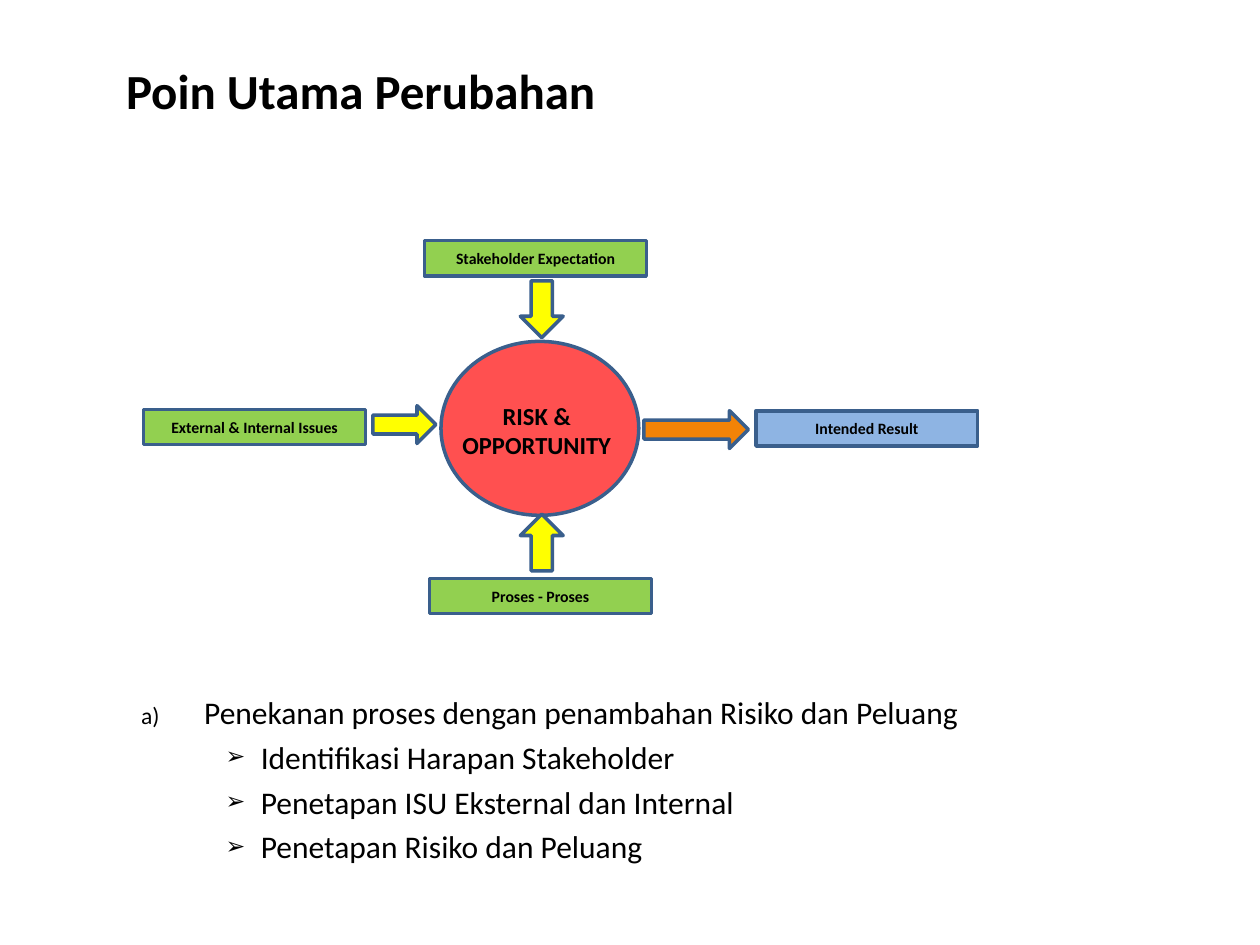
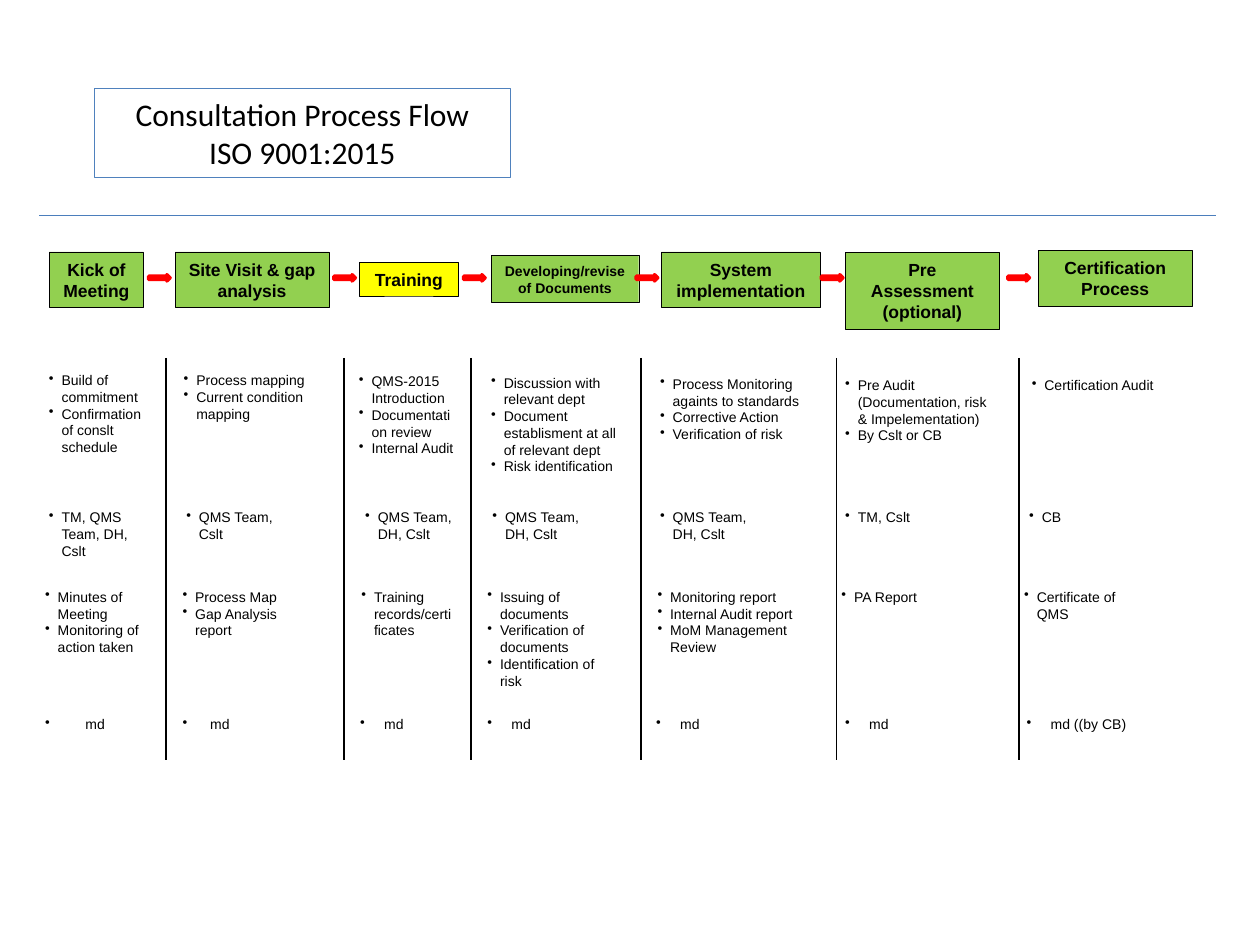
from dataclasses import dataclass

from lxml.etree import SubElement
from pptx import Presentation
from pptx.dml.color import RGBColor
from pptx.enum.shapes import MSO_CONNECTOR as Link, MSO_SHAPE as Shape
from pptx.enum.text import MSO_ANCHOR as Anchor, MSO_AUTO_SIZE as AutoSize, PP_ALIGN as Align
from pptx.oxml.ns import qn
from pptx.util import Inches, Pt

# Shared style
BLACK = RGBColor(0x00, 0x00, 0x00)
GREEN = RGBColor(0x92, 0xD0, 0x50)
YELLOW = RGBColor(0xFF, 0xFF, 0x00)
ORANGE = RGBColor(0xF3, 0x83, 0x07)
CORAL = RGBColor(0xFF, 0x50, 0x50)
SKY = RGBColor(0x8E, 0xB4, 0xE3)
STEEL = RGBColor(0x3A, 0x5F, 0x8C)
BLUE = RGBColor(0x4F, 0x81, 0xBD)
RULE_BLUE = RGBColor(0x4B, 0x7E, 0xBC)
RED = RGBColor(0xFF, 0x00, 0x00)

# The slide is a grid of 100 columns and 75 rows, each a tenth of an inch
COLUMNS, ROWS = 100, 75
TITLE_AND_BODY, TITLE_ONLY = 1, 5


def cells(*counts):
    return [Inches(count / 10) for count in counts]


@dataclass
class Bullet:
    mark: str
    margin: float
    hang: float
    percent: int = 100


def add_bullet(paragraph, bullet):
    props = paragraph._p.get_or_add_pPr()
    margin, hang = cells(bullet.margin, bullet.hang)
    props.set("marL", str(margin))
    props.set("indent", str(-hang))
    SubElement(props, qn("a:buSzPct"), val=str(bullet.percent * 1000))
    if bullet.mark == "a)":
        SubElement(props, qn("a:buAutoNum"), type="alphaLcParenR")
    else:
        SubElement(props, qn("a:buChar"), char=bullet.mark)


def write(frame, *lines, font="Calibri", size=18, bold=False, align=Align.LEFT,
          anchor=Anchor.TOP, before=0, bullets=()):
    frame.word_wrap = True
    frame.auto_size = AutoSize.NONE
    frame.vertical_anchor = anchor
    for number, line in enumerate(lines):
        paragraph = frame.add_paragraph() if number else frame.paragraphs[0]
        paragraph.alignment = align
        paragraph.space_before = Pt(before)
        run = paragraph.add_run()
        run.text = line
        run.font.name = font
        run.font.size = Pt(size)
        run.font.bold = bold
        run.font.color.rgb = BLACK
        if bullets:
            add_bullet(paragraph, bullets[number])


class Deck:
    def __init__(self):
        self.show = Presentation()
        self.show.slide_width, self.show.slide_height = cells(COLUMNS, ROWS)
        self.slide = None

    def new_slide(self, layout):
        self.slide = self.show.slides.add_slide(self.show.slide_layouts[layout])

    def placeholder(self, index, area, *lines, **style):
        holder = self.slide.placeholders[index]
        holder.left, holder.top, holder.width, holder.height = cells(*area)
        write(holder.text_frame, *lines, **style)
        return holder

    def shape(self, kind, area, fill, line, weight, label=None, **style):
        shape = self.slide.shapes.add_shape(kind, *cells(*area))
        shape.shadow.inherit = False
        shape.fill.solid()
        shape.fill.fore_color.rgb = fill
        shape.line.color.rgb = line
        shape.line.width = Pt(weight)
        if label:
            write(shape.text_frame, label, align=Align.CENTER, anchor=Anchor.MIDDLE,
                  bold=True, **style)

    def text(self, area, *lines, **style):
        box = self.slide.shapes.add_textbox(*cells(*area))
        write(box.text_frame, *lines, **style)

    def line(self, start, end, color, weight):
        rule = self.slide.shapes.add_connector(Link.STRAIGHT, *cells(*start, *end))
        rule.line.color.rgb = color
        rule.line.width = Pt(weight)
        SubElement(rule._element.spPr, qn("a:effectLst"))


# Slide 1: key points of the change
def build_key_points(deck):
    deck.new_slide(TITLE_AND_BODY)
    deck.placeholder(0, (9, 4.3, 58.5, 5.7), "Poin Utama Perubahan",
                     size=28, bold=True, align=Align.JUSTIFY)
    point = Bullet("a)", 6.2, 5, 75)
    detail = Bullet("➢", 10.7, 2.8, 75)
    deck.placeholder(1, (9, 54.5, 85, 16),
                     "Penekanan proses dengan penambahan Risiko dan Peluang",
                     "Identifikasi Harapan Stakeholder",
                     "Penetapan ISU Eksternal dan Internal",
                     "Penetapan Risiko dan Peluang",
                     align=Align.JUSTIFY, before=4, bullets=[point] + [detail] * 3)

    # Risk in the centre, inputs and result around it
    deck.shape(Shape.OVAL, (35, 27.1, 15.7, 13.8), CORAL, STEEL, 2)
    for left, top, fill, label in (
            (33.7, 19.1, GREEN, "Stakeholder Expectation"),
            (11.4, 32.5, GREEN, "External & Internal Issues"),
            (34.1, 45.9, GREEN, "Proses - Proses"),
            (60, 32.6, SKY, "Intended Result")):
        deck.shape(Shape.RECTANGLE, (left, top, 17.6, 2.8), fill, STEEL, 2, label, size=9)
    deck.text((34.5, 31.3, 16.2, 5.7), "RISK & OPPORTUNITY",
              size=14, bold=True, align=Align.CENTER)

    # Flow arrows
    for kind, area, fill in (
            (Shape.DOWN_ARROW, (41.3, 22.3, 3.4, 4.5), YELLOW),
            (Shape.UP_ARROW, (41.3, 40.8, 3.4, 4.5), YELLOW),
            (Shape.RIGHT_ARROW, (29.6, 32.2, 5, 3), YELLOW),
            (Shape.RIGHT_ARROW, (51.1, 32.6, 8.3, 3), ORANGE)):
        deck.shape(kind, area, fill, STEEL, 2)


# Slide 2: stages of the consultation
@dataclass
class Stage:
    name: str
    header: tuple
    tasks_top: float
    # Tasks, people, outputs and effort: left, width, then the items
    entries: tuple
    effort_pad: float = 0.9
    fill: RGBColor = GREEN
    size: int = 10


STAGES = (
    Stage("Kick of Meeting", (3.9, 20, 7.5, 4.4), 29, (
        (2.9, 10, "Build of commitment", "Confirmation of conslt schedule"),
        (2.9, 9.2, "TM, QMS Team, DH, Cslt"),
        (2.6, 10.1, "Minutes of Meeting", "Monitoring of action taken"),
        (2.6, 9.2, "md")), effort_pad=2.2),
    Stage("Site Visit & gap analysis", (13.9, 20, 12.2, 4.4), 29, (
        (13.6, 12, "Process mapping", "Current condition mapping"),
        (13.8, 9.2, "QMS Team, Cslt"),
        (13.5, 12.1, "Process Map", "Gap Analysis report"),
        (13.5, 9.2, "md")), effort_pad=1.2),
    Stage("Training", (28.5, 20.8, 7.9, 2.7), 29.1, (
        (27.5, 9.8, "QMS-2015 Introduction", "Documentation review", "Internal Audit"),
        (28, 9.2, "QMS Team, DH, Cslt"),
        (27.7, 9.2, "Training records/certificates"),
        (27.6, 9.2, "md")), fill=YELLOW),
    Stage("Developing/revise of Documents", (39, 20.3, 11.7, 3.7), 29.2, (
        (38, 12.4, "Discussion with relevant dept",
         "Document establisment at all of relevant dept", "Risk identification"),
        (38.1, 9.2, "QMS Team, DH, Cslt"),
        (37.7, 12.1, "Issuing of documents", "Verification of documents",
         "Identification of risk"),
        (37.7, 9.2, "md")), size=8),
    Stage("System implementation", (52.5, 20, 12.6, 4.4), 29.3, (
        (51.4, 13.9, "Process Monitoring againts to standards", "Corrective Action",
         "Verification of risk"),
        (51.4, 9.2, "QMS Team, DH, Cslt"),
        (51.2, 13.9, "Monitoring report", "Internal Audit report",
         "MoM Management Review"),
        (51.1, 9.2, "md"))),
    Stage("Pre Assessment (optional)", (67.1, 20, 12.2, 6.1), 29.4, (
        (66.1, 13.9, "Pre Audit (Documentation, risk & Impelementation)",
         "By Cslt or CB"),
        (66.1, 9.2, "TM, Cslt"),
        (65.8, 9.2, "PA Report"),
        (66.1, 9.2, "md"))),
    Stage("Certification Process", (82.4, 19.9, 12.2, 4.4), 29.4, (
        (80.9, 13.9, "Certification Audit"),
        (80.7, 9.2, "CB"),
        (80.3, 11.8, "Certificate of QMS"),
        (80.5, 11.6, "md ((by CB)"))),
)
ROW_TOPS = (39.9, 46.2, 56.3)
LINE_ROWS, PADDING_ROWS = 1.35, 1
DIVIDERS = (13.2, 27.3, 37.4, 50.9, 66.4, 80.9)
STEP_ARROWS = (11.8, 26.5, 36.8, 50.5, 65.2, 80)


def build_process_flow(deck):
    deck.new_slide(TITLE_ONLY)
    title = deck.placeholder(0, (7.5, 7, 33, 7.1), "Consultation Process Flow",
                             "ISO 9001:2015", align=Align.CENTER, anchor=Anchor.MIDDLE)
    title.line.color.rgb = BLUE
    title.line.width = Pt(0.75)
    deck.line((3.1, 17.1), (96.5, 17.1), RULE_BLUE, 0.75)

    # Stage headers with their entries below
    for stage in STAGES:
        deck.shape(Shape.RECTANGLE, stage.header, stage.fill, BLACK, 0.25, stage.name,
                   font="Arial", size=stage.size)
        pads = (0, 0, 0, stage.effort_pad)
        tops = (stage.tasks_top, *ROW_TOPS)
        for top, pad, (left, width, *items) in zip(tops, pads, stage.entries):
            bullet = Bullet("•", 1 + pad, 1 + pad)
            height = PADDING_ROWS + LINE_ROWS * len(items)
            deck.text((left, top, width, height), *items, font="Arial", size=8,
                      bullets=[bullet] * len(items))

    # Dividers and steps between the stages
    for divider, step in zip(DIVIDERS, STEP_ARROWS):
        deck.line((divider, 28.4), (divider, 60.3), BLACK, 1)
        deck.shape(Shape.RIGHT_ARROW, (step, 21.8, 1.7, 0.5), BLUE, RED, 2)


def main():
    deck = Deck()
    build_key_points(deck)
    build_process_flow(deck)
    deck.show.save("out.pptx")


if __name__ == "__main__":
    main()
